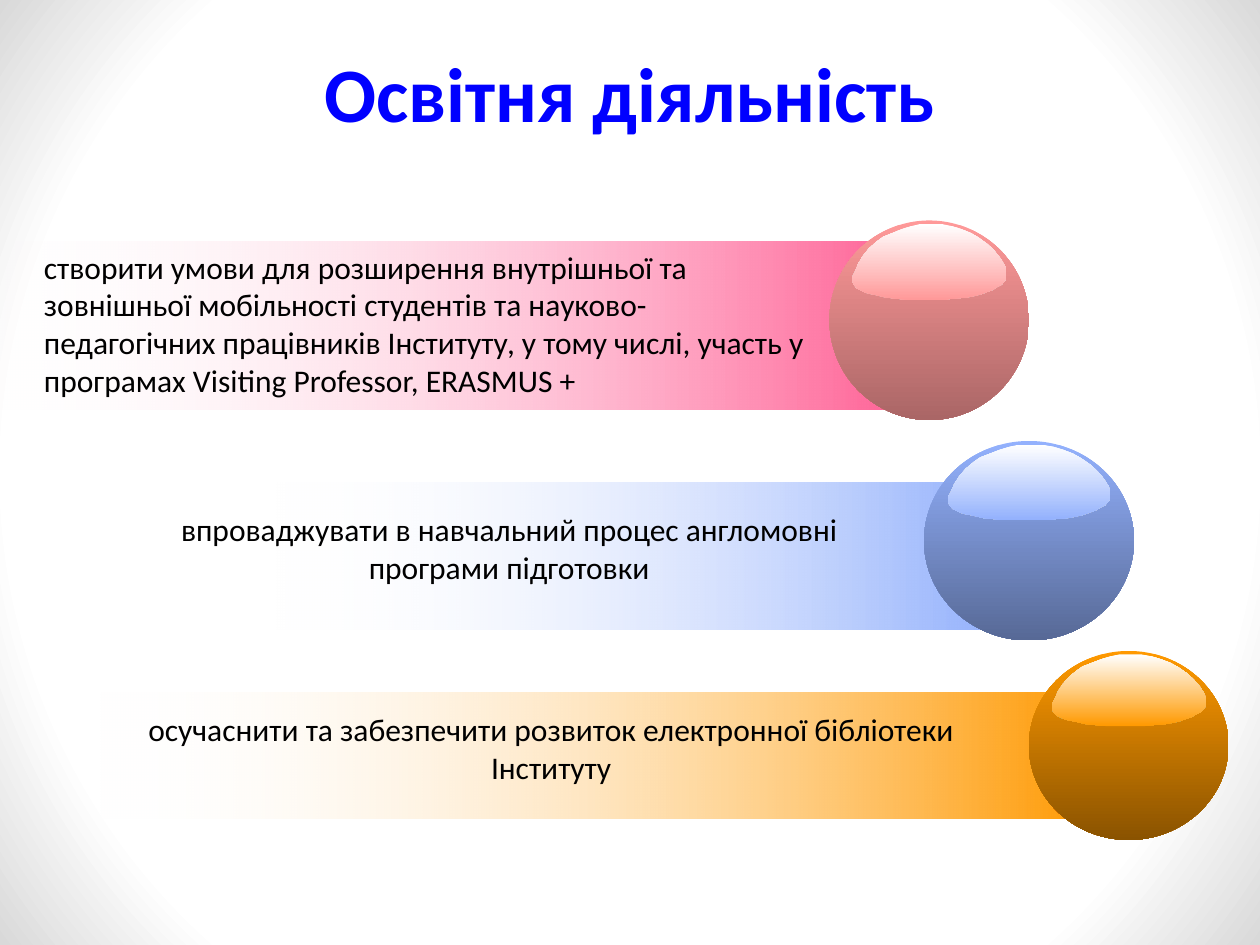
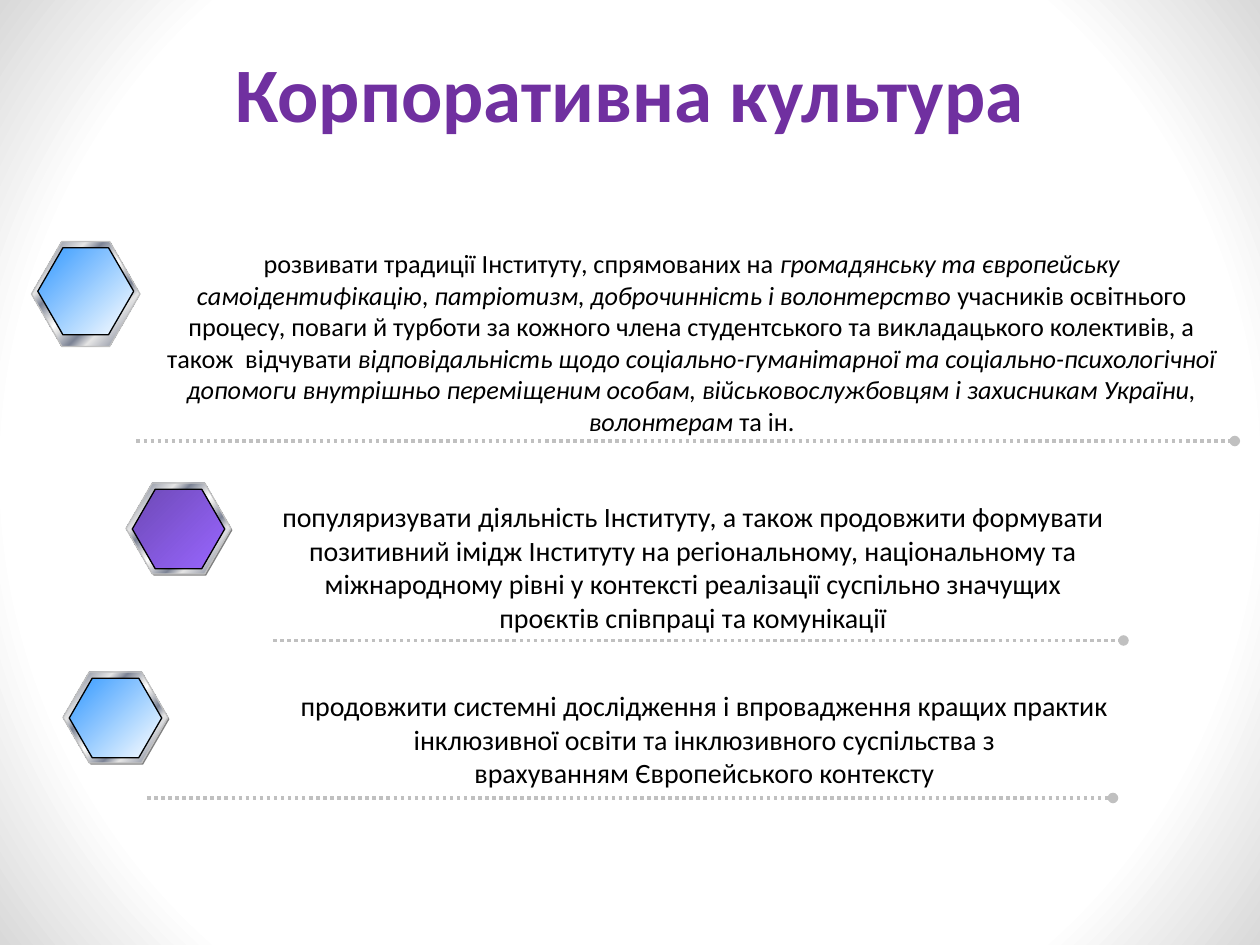
from pptx import Presentation
from pptx.dml.color import RGBColor
from pptx.enum.dml import MSO_LINE
from pptx.enum.shapes import MSO_CONNECTOR, MSO_SHAPE
from pptx.enum.text import MSO_ANCHOR, MSO_AUTO_SIZE, PP_ALIGN
from pptx.oxml import parse_xml
from pptx.oxml.ns import nsdecls, qn
from pptx.util import Pt

FONT = "Calibri"
COLORS = {
    "white": "FFFFFF", "black": "000000", "edge": "D9D9D9",
    "blue_title": "0000FF", "purple_title": "7030A0",
    "pink_bar": "FF6699", "pink": "FF9999", "pink_dark": "AA6666",
    "blue": "93B1FD", "blue_dark": "576996",
    "orange": "FF9900", "orange_dark": "8A5300",
    "silver": "C0C0C0", "shade": "808080", "metal": "E6E6E6", "steel": "7D8496",
    "sky": "3399FF", "violet_dark": "6D49B6", "violet": "9966FF",
}
METAL_STOPS = [(0, "metal"), (7, "steel"), (26, "metal"), (34, "steel"),
               (46, "metal"), (50, "white"), (54, "metal"), (66, "steel"),
               (74, "metal"), (93, "steel"), (100, "metal")]
# Outline of the highlight on a ball, in percent of its own box
HIGHLIGHT = [
    (99, 55), (100, 62), (100, 67), (100, 72), (98, 77), (97, 80), (94, 83),
    (91, 87), (87, 90), (83, 93), (79, 95), (74, 97), (68, 98), (63, 99),
    (60, 100), (36, 100), (31, 99), (27, 98), (22, 97), (18, 95), (14, 93),
    (11, 92), (8, 90), (6, 88), (3, 85), (1, 80), (0, 75), (0, 70), (2, 62),
    (4, 52), (7, 42), (11, 32), (16, 23), (20, 17), (26, 12), (32, 7), (38, 3),
    (44, 0), (51, 0), (58, 0), (65, 3), (71, 7), (77, 12), (82, 18), (88, 27),
    (92, 35), (96, 45)]


def rgb(name):
    return RGBColor.from_string(COLORS[name])


def set_gradient(fill, owner, stops, angle=None):
    """Fill with (percent, colour[, alpha]) stops; without an angle, a circle."""
    fill.gradient()
    grad = owner.find(".//" + qn("a:gradFill"))
    for child in list(grad):
        grad.remove(child)
    marks = ""
    for pos, name, *alpha in stops:
        clear = f'<a:alpha val="{alpha[0] * 1000}"/>' if alpha else ""
        marks += (f'<a:gs pos="{pos * 1000}"><a:srgbClr val="{COLORS[name]}">'
                  f'{clear}</a:srgbClr></a:gs>')
    grad.append(parse_xml(f'<a:gsLst {nsdecls("a")}>{marks}</a:gsLst>'))
    if angle is None:
        grad.append(parse_xml(
            f'<a:path {nsdecls("a")} path="circle">'
            '<a:fillToRect l="50000" t="50000" r="50000" b="50000"/></a:path>'))
    else:
        grad.append(parse_xml(
            f'<a:lin {nsdecls("a")} ang="{angle * 60000}" scaled="0"/>'))


def paint(sp, stops, angle, line=None):
    """Apply a gradient, or a plain fill when stops is a colour name."""
    if isinstance(stops, str):
        sp.fill.solid()
        sp.fill.fore_color.rgb = rgb(stops)
    else:
        set_gradient(sp.fill, sp._element.spPr, stops, angle)
    if line:
        sp.line.color.rgb = rgb(line)
        sp.line.width = Pt(0.75)
    else:
        sp.line.fill.background()
    sp.shadow.inherit = False


def add_preset(shapes, kind, box, stops, angle=0, line=None):
    sp = shapes.add_shape(kind, *map(Pt, box))
    paint(sp, stops, angle, line)
    return sp


def style_run(r, size, color, bold=None, italic=None):
    r.font.name, r.font.size = FONT, Pt(size)
    r.font.bold, r.font.italic = bold, italic
    r.font.color.rgb = rgb(color)


def add_text(shapes, box, paragraphs, size, align=PP_ALIGN.CENTER, wrap=True):
    """Each paragraph is a list of runs, which alternate upright and italic."""
    tf = shapes.add_textbox(*map(Pt, box)).text_frame
    tf.word_wrap = wrap
    tf.auto_size = MSO_AUTO_SIZE.SHAPE_TO_FIT_TEXT
    for i, runs in enumerate(paragraphs):
        p = tf.add_paragraph() if i else tf.paragraphs[0]
        p.alignment = align
        for j, text in enumerate(runs):
            r = p.add_run()
            r.text = text
            style_run(r, size, "black", italic=j % 2 == 1)


def add_titled_slide(prs, title, color):
    s = prs.slides.add_slide(prs.slide_layouts[5])
    sp = s.shapes.title
    sp.left, sp.top, sp.width, sp.height = map(Pt, (36, 12, 648, 81))
    tf = sp.text_frame
    tf.vertical_anchor = MSO_ANCHOR.MIDDLE
    p = tf.paragraphs[0]
    p.alignment = PP_ALIGN.CENTER
    r = p.add_run()
    r.text = title
    style_run(r, 44, color, bold=True)
    return s


def add_ball(s, box, light, dark):
    shapes = s.shapes.add_group_shape().shapes
    add_preset(shapes, MSO_SHAPE.OVAL, box, [(0, light), (100, dark)], 90)
    x, y, w, h = box
    left, top, width, height = x + 0.114 * w, y + 0.018 * h, 0.773 * w, 0.38 * h
    points = [(Pt(left + width * px / 100), Pt(top + height * py / 100))
              for px, py in HIGHLIGHT]
    builder = shapes.build_freeform(*points[0])
    builder.add_line_segments(points[1:], close=True)
    paint(builder.convert_to_shape(), [(0, "white"), (100, light)], 90)


def add_hexagon(shapes, box, face_height, face_stops, shaded):
    x, y, w, h = box
    layers = [(box, METAL_STOPS, "silver"),
              ((x + 3.6, y + 3.6, w - 7.2, face_height), face_stops, "black")]
    if shaded:
        layers.insert(0, ((x + 0.8, y + 1, w, h), "shade", None))
    for layer_box, stops, line in layers:
        sp = add_preset(shapes, MSO_SHAPE.HEXAGON, layer_box, stops, 45, line)
        sp.adjustments[0] = 0.289


def add_dotted_rule(shapes, x1, x2, y):
    c = shapes.add_connector(MSO_CONNECTOR.STRAIGHT, Pt(x1), Pt(y), Pt(x2), Pt(y))
    c.line.color.rgb = rgb("silver")
    c.line.width = Pt(2)
    c.line.dash_style = MSO_LINE.ROUND_DOT
    c.line._ln.append(parse_xml(f'<a:tailEnd {nsdecls("a")} type="oval"/>'))
    c._element.spPr.append(parse_xml(f'<a:effectLst {nsdecls("a")}/>'))


def build_education(prs):
    s = add_titled_slide(prs, "Освітня діяльність", "blue_title")
    rows = [
        ((-18, 138, 528, 96), "pink_bar", (474, 126, 114, 114), "pink", "pink_dark",
         (18, 138, 456, 94), PP_ALIGN.LEFT,
         "створити умови для розширення внутрішньої та зовнішньої мобільності "
         "студентів та науково-педагогічних працівників Інституту, у тому числі, "
         "участь у програмах Visiting Professor, ERASMUS +"),
        ((156, 276, 415, 84), "blue", (528, 252, 120, 114), "blue", "blue_dark",
         (66, 288, 450, 51), PP_ALIGN.CENTER,
         "впроваджувати в навчальний процес англомовні програми підготовки"),
        ((54, 396, 572, 72), "orange", (588, 372, 114, 108), "orange", "orange_dark",
         (66, 402, 498, 51), PP_ALIGN.CENTER,
         "осучаснити та забезпечити розвиток електронної бібліотеки Інституту"),
    ]
    for bar, bar_color, ball, light, dark, text_box, align, text in rows:
        add_preset(s.shapes, MSO_SHAPE.RECTANGLE, bar,
                   [(0, "white", 0), (100, bar_color)])
        add_ball(s, ball, light, dark)
        add_text(s.shapes, text_box, [[text]], 18, align)


def build_culture(prs):
    s = add_titled_slide(prs, "Корпоративна культура", "purple_title")
    sky = [(0, "sky"), (100, "white")]
    violet = [(0, "violet_dark"), (100, "violet")]
    traditions = [[
        "розвивати традиції Інституту, спрямованих на ",
        "громадянську та європейську самоідентифікацію", ", ",
        "патріотизм, доброчинність і волонтерство ",
        "учасників освітнього процесу, поваги й турботи за кожного члена "
        "студентського та викладацького колективів, а також  відчувати ",
        "відповідальність щодо соціально-гуманітарної та соціально-психологічної "
        "допомоги внутрішньо переміщеним особам, військовослужбовцям і "
        "захисникам України, волонтерам ", "та ін."]]
    image = [["популяризувати діяльність Інституту, а також продовжити формувати "
              "позитивний імідж Інституту на регіональному, національному та "
              "міжнародному рівні у контексті реалізації суспільно значущих "
              "проєктів співпраці та комунікації"]]
    inclusion = [["продовжити системні дослідження і впровадження кращих практик"],
                 ["інклюзивної освіти та інклюзивного суспільства з"],
                 ["врахуванням Європейського контексту"]]
    rows = [
        ((18, 138, 62, 60), 49.7, sky, False, (78, 705.6, 252),
         (82.8, 138, 625, 116.6), traditions, 15, True),
        ((72, 276, 60, 52), 45.4, violet, True, (156, 642, 366),
         (150, 282, 492, 85), image, 16, True),
        ((36, 384, 60, 52), 45.4, sky, True, (84, 636, 456),
         (162, 390, 481, 65.5), inclusion, 16, False),
    ]
    for hexagon, face_height, stops, shaded, rule, text_box, text, size, wrap in rows:
        shapes = s.shapes.add_group_shape().shapes
        add_hexagon(shapes, hexagon, face_height, stops, shaded)
        add_dotted_rule(shapes, *rule)
        add_text(shapes, text_box, text, size, wrap=wrap)


def main():
    prs = Presentation()
    prs.slide_width, prs.slide_height = Pt(720), Pt(540)
    master = prs.slide_master
    set_gradient(master.background.fill, master._element.cSld,
                 [(0, "white"), (79, "white"), (100, "edge")])
    build_education(prs)
    build_culture(prs)
    prs.save("out.pptx")


if __name__ == "__main__":
    main()
